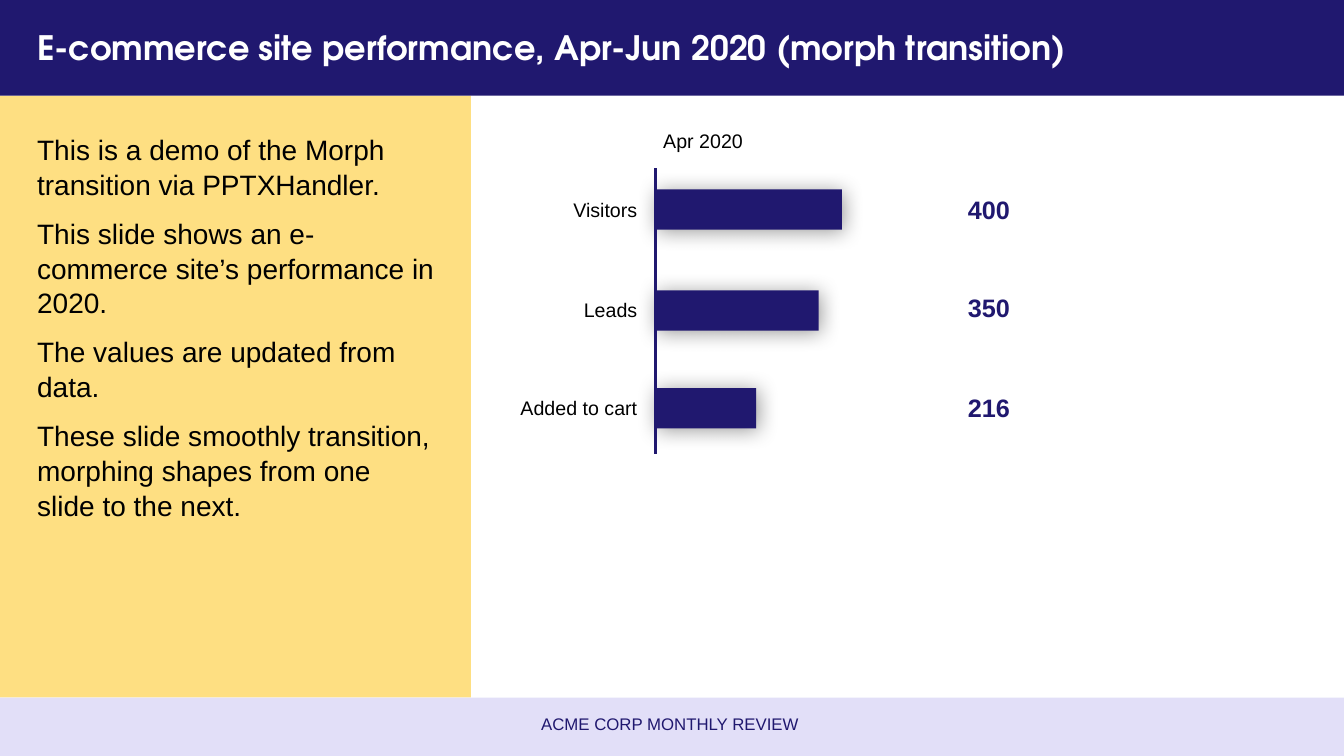
import pptx
import pptx.util
import pptx.dml.color
import pptx.enum.shapes
import pptx.enum.text
import pptx.oxml
import pptx.oxml.ns
from pptx.util import Inches

NAVY = pptx.dml.color.RGBColor(0x20, 0x18, 0x6F)
AMBER = pptx.dml.color.RGBColor(0xFE, 0xC1, 0x07)
LAVENDER = pptx.dml.color.RGBColor(0xC6, 0xC1, 0xF2)
BLACK = pptx.dml.color.RGBColor(0, 0, 0)
WHITE = pptx.dml.color.RGBColor(0xFF, 0xFF, 0xFF)

ALIGN = pptx.enum.text.PP_ALIGN
ANCHOR = pptx.enum.text.MSO_ANCHOR
NAMESPACE = pptx.oxml.ns.nsdecls("a")
BAR_SHADOW = (
    f'<a:outerShdw {NAMESPACE} blurRad="190500" dist="25400" dir="2700000" '
    'algn="tl" rotWithShape="0"><a:srgbClr val="000000">'
    '<a:alpha val="40000"/></a:srgbClr></a:outerShdw>'
)

STORY = [
    "This is a demo of the Morph transition via PPTXHandler.",
    "This slide shows an e-commerce site’s performance in 2020.",
    "The values are updated from data.",
    "These slide smoothly transition, morphing shapes from one slide to the next.",
]
# label, value, bar top, value top
METRICS = [
    ("Visitors", 400, 1.88, 1.88),
    ("Leads", 350, 2.88, 2.85),
    ("Added to cart", 216, 3.85, 3.84),
]
AXIS_LEFT = 6.5
VISITS_PER_INCH = 216


class SlideBuilder:
    def __init__(self, page, font="Arial"):
        self.page = page
        self.font = font

    def block(self, left, top, width, height, color, opacity=100, shadow=False):
        shape = self.page.shapes.add_shape(
            pptx.enum.shapes.MSO_SHAPE.RECTANGLE,
            Inches(left), Inches(top), Inches(width), Inches(height))
        shape.fill.solid()
        shape.fill.fore_color.rgb = color
        shape.line.fill.background()
        shape.shadow.inherit = False
        if opacity < 100:
            shape.fill._xPr.find(".//" + pptx.oxml.ns.qn("a:srgbClr")).append(
                pptx.oxml.parse_xml(f'<a:alpha {NAMESPACE} val="{opacity * 1000}"/>'))
        if shadow:
            effects = shape._element.spPr.find(pptx.oxml.ns.qn("a:effectLst"))
            effects.append(pptx.oxml.parse_xml(BAR_SHADOW))

    def text(self, left, top, width, height, lines, size, color=BLACK, bold=False,
             font=None, align=ALIGN.LEFT, anchor=ANCHOR.TOP, wrap=True,
             space_before=0, line_spacing=None):
        box = self.page.shapes.add_textbox(
            Inches(left), Inches(top), Inches(width), Inches(height))
        frame = box.text_frame
        frame.word_wrap = wrap
        frame.vertical_anchor = anchor
        frame.text = "\n".join(lines)
        for para in frame.paragraphs:
            para.alignment = align
            para.space_before = pptx.util.Pt(space_before)
            para.line_spacing = line_spacing
            para.font.name = font or self.font
            para.font.size = pptx.util.Pt(size)
            para.font.bold = bold
            para.font.color.rgb = color

    def line(self, left, top, right, bottom, color, width):
        connector = self.page.shapes.add_connector(
            pptx.enum.shapes.MSO_CONNECTOR.STRAIGHT,
            Inches(left), Inches(top), Inches(right), Inches(bottom))
        connector.line.color.rgb = color
        connector.line.width = pptx.util.Pt(width)
        connector._element.spPr.append(
            pptx.oxml.parse_xml(f"<a:effectLst {NAMESPACE}/>"))


def main():
    deck = pptx.Presentation()
    deck.slide_width = Inches(13.33)
    deck.slide_height = Inches(7.5)
    builder = SlideBuilder(deck.slides.add_slide(deck.slide_layouts[6]))

    builder.block(0, 0.95, 4.67, 5.97, AMBER, opacity=50)
    builder.block(0, 6.92, 13.33, 0.6, LAVENDER, opacity=50)
    builder.block(0, 0, 13.33, 0.95, NAVY)
    builder.text(0.27, 0.12, 12.8, 0.7,
                 ["E-commerce site performance, Apr-Jun 2020 (morph transition)"],
                 24, WHITE, bold=True, font="TeX Gyre Adventor", anchor=ANCHOR.MIDDLE)
    builder.text(0.27, 1.25, 4.15, 5.6, STORY, 20, space_before=10, line_spacing=1.04)
    builder.text(2.04, 6.98, 9.21, 0.4, ["ACME CORP MONTHLY REVIEW"], 12, NAVY,
                 align=ALIGN.CENTER, anchor=ANCHOR.MIDDLE)

    builder.text(6.48, 1.23, 1.97, 0.34, ["Apr 2020"], 14)
    for label, value, bar_top, value_top in METRICS:
        builder.block(AXIS_LEFT, bar_top, round(value / VISITS_PER_INCH, 2), 0.4,
                      NAVY, shadow=True)
        builder.text(4.92, bar_top + 0.03, 1.5, 0.34, [label], 14, align=ALIGN.RIGHT)
        builder.text(9.5, value_top, 0.71, 0.4, [str(value)], 18, NAVY,
                     bold=True, wrap=False)
    builder.line(AXIS_LEFT, 1.67, AXIS_LEFT, 4.5, NAVY, 2)

    deck.save("out.pptx")


if __name__ == "__main__":
    main()
